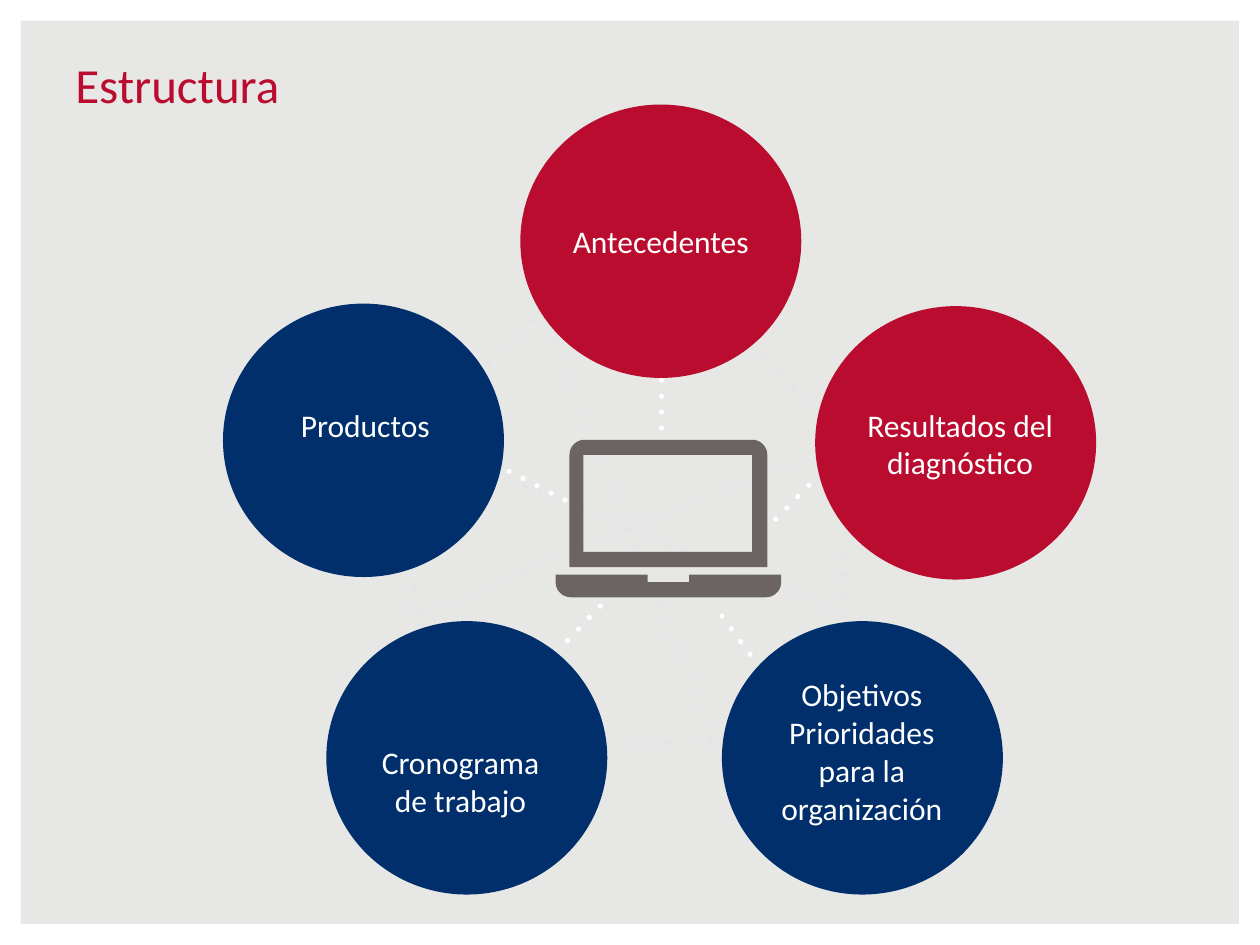
from dataclasses import dataclass
from math import cos, radians, sin

from lxml.etree import SubElement
from pptx import Presentation
from pptx.dml.color import RGBColor
from pptx.enum.shapes import MSO_CONNECTOR, MSO_SHAPE
from pptx.enum.text import MSO_ANCHOR, MSO_AUTO_SIZE, PP_ALIGN
from pptx.oxml.ns import qn
from pptx.util import Emu, Pt

PX = 9144  # 100 px to the inch
WHITE = RGBColor(0xFF, 0xFF, 0xFF)
PAPER = RGBColor(0xE7, 0xE7, 0xE5)
WEB = RGBColor(0xE5, 0xE5, 0xE5)
RED = RGBColor(0xBA, 0x0C, 0x2F)
NAVY = RGBColor(0x00, 0x2F, 0x6C)
GREY = RGBColor(0x6C, 0x64, 0x63)
CIRCLE_WIDTH, CIRCLE_HEIGHT = 223, 217
INSETS = ("margin_left", "margin_top", "margin_right", "margin_bottom")


@dataclass(frozen=True)
class Circle:
    left: int
    top: int
    color: RGBColor
    text: str = ""


@dataclass(frozen=True)
class Label:
    text: str
    left: int
    top: int
    width: int
    height: int
    size: int = 18
    color: RGBColor = WHITE
    align: PP_ALIGN = PP_ALIGN.CENTER


@dataclass(frozen=True)
class Spoke:
    x1: int
    y1: int
    x2: int
    y2: int
    color: RGBColor = WHITE


CIRCLES = [
    Circle(413, 83, RED, "Antecedentes"),
    Circle(647, 243, RED),
    Circle(177, 241, NAVY),
    Circle(573, 493, NAVY),
    Circle(259, 493, NAVY),
]
LABELS = [
    Label("Estructura", 50, 38, 476, 55, 28, RED, PP_ALIGN.LEFT),
    Label("Resultados del diagnóstico", 658, 317, 208, 71),
    Label("Objetivos Prioridades para la organización", 609, 531, 150, 131),
    Label("Cronograma de trabajo", 278, 585, 175, 71),
    Label("Productos", 217, 317, 146, 40),
]
WEB_LINES = [
    Spoke(432, 247, 568, 592, WEB),
    Spoke(672, 489, 328, 350, WEB),
    Spoke(672, 350, 328, 489, WEB),
]
SPOKES = [
    Spoke(485, 472, 444, 515),
    Spoke(404, 374, 464, 405),
    Spoke(607, 421, 647, 380),
    Spoke(525, 302, 525, 350),
    Spoke(573, 489, 598, 523),
]
OCTAGON = [(571, 248), (671, 348), (671, 490), (571, 590),
           (429, 590), (329, 490), (329, 349), (429, 248)]


def px(*lengths: int) -> list[Emu]:
    return [Emu(length * PX) for length in lengths]


def paint(shape, color: RGBColor) -> None:
    shape.shadow.inherit = False
    shape.fill.solid()
    shape.fill.fore_color.rgb = color
    shape.line.fill.background()


def dot_line(line, color: RGBColor, width: int) -> None:
    """Draw the line as round dots, two widths apart."""
    line.color.rgb = color
    line.width = Pt(width)
    outline = line._get_or_add_ln()
    outline.set("cap", "rnd")
    dashes = SubElement(outline, qn("a:custDash"))
    SubElement(dashes, qn("a:ds"), d="100000", sp="200000")
    SubElement(outline, qn("a:round"))


def write(frame, text: str, size: int, color: RGBColor, align: PP_ALIGN) -> None:
    frame.word_wrap = True
    para = frame.paragraphs[0]
    para.alignment = align
    span = para.add_run()
    span.text = text
    for name, value in {"name": "Calibri", "size": Pt(size)}.items():
        setattr(span.font, name, value)
    span.font.color.rgb = color


def add_circle(page, circle: Circle) -> None:
    shape = page.shapes.add_shape(
        MSO_SHAPE.OVAL, *px(circle.left, circle.top, CIRCLE_WIDTH, CIRCLE_HEIGHT))
    paint(shape, circle.color)
    if circle.text:
        frame = shape.text_frame
        layout = dict.fromkeys(INSETS, 0) | {"vertical_anchor": MSO_ANCHOR.MIDDLE}
        for name, value in layout.items():
            setattr(frame, name, value)
        write(frame, circle.text, 18, WHITE, PP_ALIGN.CENTER)


def add_label(page, label: Label) -> None:
    box = page.shapes.add_textbox(*px(label.left, label.top, label.width, label.height))
    write(box.text_frame, label.text, label.size, label.color, label.align)
    if label.align == PP_ALIGN.CENTER:
        box.text_frame.auto_size = MSO_AUTO_SIZE.SHAPE_TO_FIT_TEXT


def add_spoke(page, spoke: Spoke) -> None:
    connector = page.shapes.add_connector(
        MSO_CONNECTOR.STRAIGHT, *px(spoke.x1, spoke.y1, spoke.x2, spoke.y2))
    dot_line(connector.line, spoke.color, 3)
    SubElement(connector._element.spPr, qn("a:effectLst"))


def add_outline(page, *contours: list[tuple[float, float]]):
    """Add one freeform made of closed contours; an inner one is a hole."""
    points = [[(x * PX, y * PX) for x, y in contour] for contour in contours]
    builder = page.shapes.build_freeform(*points[0][0], scale=1.0)
    for index, contour in enumerate(points):
        if index:
            builder.move_to(*contour[0])
        builder.add_line_segments(contour[1:], close=True)
    return builder.convert_to_shape()


def corner(x: int, y: int, radius: int, start: int) -> list[tuple[float, float]]:
    """Points of a quarter circle about (x, y), clockwise from start degrees."""
    angles = [radians(start + step) for step in range(0, 91, 10)]
    return [(x + radius * cos(angle), y + radius * sin(angle)) for angle in angles]


def add_laptop(page) -> None:
    glass = [(597, 438), (463, 438), (463, 361), (597, 361)]
    lid = [(452, 450), *corner(464, 361, 12, 180), *corner(597, 361, 12, 270), (609, 450)]
    base = [(441, 456), (514, 456), (514, 462), (547, 462), (547, 456), (620, 456),
            *corner(608, 462, 12, 0), *corner(453, 462, 12, 90)]
    paint(add_outline(page, glass, lid, base), GREY)


def main() -> None:
    deck = Presentation()
    deck.slide_width, deck.slide_height = px(1000, 750)
    page = deck.slides.add_slide(deck.slide_layouts[6])
    page.background.fill.solid()
    page.background.fill.fore_color.rgb = PAPER

    border = page.shapes.add_shape(MSO_SHAPE.FRAME, *px(0, 0, 1000, 750))
    border.adjustments[0] = 0.022
    paint(border, WHITE)

    octagon = add_outline(page, OCTAGON)
    octagon.shadow.inherit = False
    octagon.fill.background()
    dot_line(octagon.line, WEB, 4)

    for line in WEB_LINES:
        add_spoke(page, line)
    for circle in CIRCLES:
        add_circle(page, circle)
    for spoke in SPOKES:
        add_spoke(page, spoke)
    for label in LABELS:
        add_label(page, label)
    add_laptop(page)
    deck.save("out.pptx")


if __name__ == "__main__":
    main()
